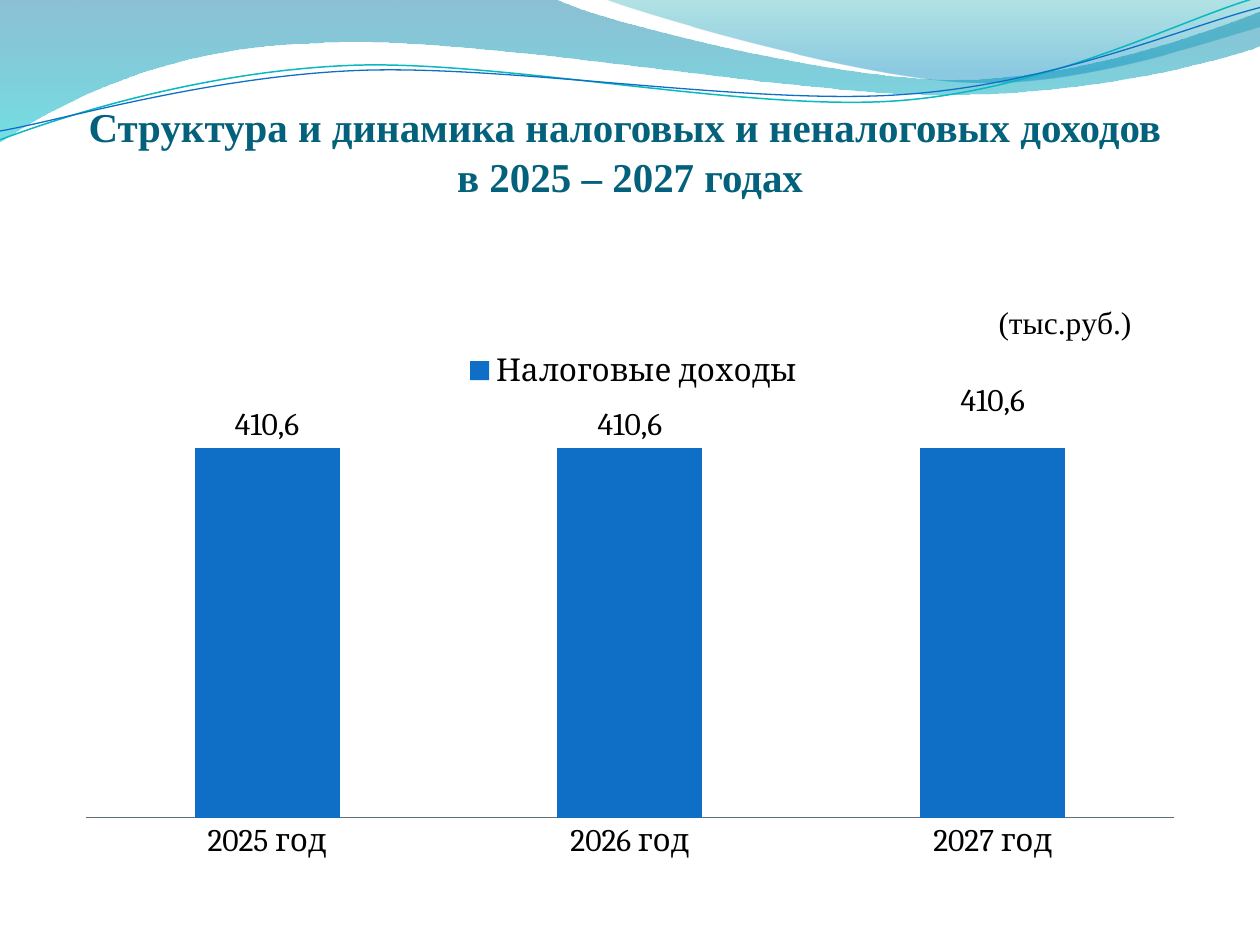
import lxml.etree
import pptx
import pptx.chart.data
import pptx.dml.color
import pptx.enum.chart
import pptx.enum.text
import pptx.oxml
import pptx.oxml.ns
import pptx.util

RGBColor = pptx.dml.color.RGBColor
TITLE_TEAL = RGBColor(0x04, 0x61, 0x7B)
BLUE = RGBColor(0x0F, 0x6F, 0xC6)
AQUA = RGBColor(0x0A, 0xB8, 0xBF)
WAVE_TOP = RGBColor(0x00, 0x74, 0xA1)
WAVE_BOTTOM = RGBColor(0x00, 0xC6, 0xCF)
CREST_TOP = RGBColor(0x00, 0xA1, 0xA9)
CREST_BOTTOM = RGBColor(0x00, 0x8B, 0xBF)
BLACK = RGBColor(0, 0, 0)
AXIS_GRAY = RGBColor(0x60, 0x70, 0x78)

deck = pptx.Presentation()
deck.slide_width = pptx.util.Inches(10)
deck.slide_height = pptx.util.Inches(7.5)
WIDTH, HEIGHT = deck.slide_width, deck.slide_height
page = deck.slides.add_slide(deck.slide_layouts[5])


def add_outline(steps, closed):
    """Draw a path in inches: pairs are line ends, six numbers a cubic curve."""
    points = [(round(step[i] * 100), round(step[i + 1] * 100))
              for step in steps for i in range(0, len(step), 2)]
    builder = page.shapes.build_freeform(*points[0], scale=pptx.util.Inches(0.01))
    builder.add_line_segments(points[1:], close=closed)
    shape = builder.convert_to_shape()
    shape.shadow.inherit = False
    lines = iter(shape.element.xpath(".//a:lnTo"))
    for step in steps[1:]:
        first = next(lines)
        if len(step) == 6:
            first.tag = pptx.oxml.ns.qn("a:cubicBezTo")
            for line in (next(lines), next(lines)):
                first.append(line[0])
                line.getparent().remove(line)
    return shape


def set_layout(parent, index, **values):
    """Give a chart part a manual layout as its child number index."""
    for old in parent.findall(pptx.oxml.ns.qn("c:layout")):
        parent.remove(old)
    tags = "".join(f'<c:{key} val="{value}"/>' for key, value in values.items())
    parent.insert(index, pptx.oxml.parse_xml(
        f'<c:layout {pptx.oxml.ns.nsdecls("c")}><c:manualLayout>{tags}'
        '</c:manualLayout></c:layout>'))


# Waves: outline, then (colour, position, opacity in percent) of each stop
waves = [
    ([(0, 0), (4.4, -0.01), (4.76, 0.17, 6.64, 0.63, 7.58, 0.63),
      (8.53, 0.63, 9.58, 0.26, 10, 0.09), (10.01, 0.36),
      (9.83, 0.44, 8.7, 0.76, 7.46, 0.75), (6.22, 0.75, 3.82, 0.28, 2.57, 0.34),
      (1.29, 0.36, 0.46, 0.83, -0.01, 1.13)],
     [(WAVE_TOP, 0, 45), (WAVE_BOTTOM, 1, 55)]),
    ([(4.79, -0.01), (5.09, 0.11, 6.82, 0.62, 7.69, 0.65),
      (8.56, 0.69, 9.61, 0.32, 10, 0.21), (10, 0)],
     [(CREST_TOP, 0, 30), (CREST_BOTTOM, 0.8, 45)]),
]
for outline, stops in waves:
    wave = add_outline(outline, True)
    wave.line.fill.background()
    wave.fill.gradient()
    wave.fill.gradient_angle = 270
    for stop, (color, position, opacity) in zip(wave.fill.gradient_stops, stops):
        stop.color.rgb = color
        stop.position = position
    for node, (color, position, opacity) in zip(wave.element.xpath(".//a:gs/a:srgbClr"), stops):
        lxml.etree.SubElement(node, pptx.oxml.ns.qn("a:alpha"), val=str(opacity * 1000))

ripples = [
    ([(0, 1.11), (0.48, 0.93, 1.58, 0.57, 2.77, 0.52),
      (3.95, 0.47, 5.93, 0.89, 7.13, 0.8), (8.33, 0.71, 9.38, 0.15, 9.98, -0.02)], AQUA, 0.85),
    ([(0, 1.04), (0.47, 0.96, 1.64, 0.61, 2.83, 0.56),
      (4.03, 0.51, 5.97, 0.84, 7.17, 0.75), (8.36, 0.67, 9.41, 0.21, 10, 0.06)], BLUE, 0.75),
]
for outline, color, thickness in ripples:
    ripple = add_outline(outline, False)
    ripple.fill.background()
    ripple.line.color.rgb = color
    ripple.line.width = pptx.util.Pt(thickness)

# Title
title = page.shapes.title
title.left, title.top = int(WIDTH * 0.05), int(HEIGHT * 0.1)
title.width, title.height = int(WIDTH * 0.9), int(HEIGHT * 0.17)
frame = title.text_frame
frame.word_wrap = True
frame.auto_size = pptx.enum.text.MSO_AUTO_SIZE.NONE
frame.vertical_anchor = pptx.enum.text.MSO_ANCHOR.TOP
frame.margin_left = frame.margin_right = frame.margin_bottom = 0
frame.margin_top = pptx.util.Inches(0.05)
frame.text = "Структура и динамика налоговых и неналоговых доходов \vв 2025 – 2027 годах"
para = frame.paragraphs[0]
para.alignment = pptx.enum.text.PP_ALIGN.CENTER
para.line_spacing = 1.02
para.font.name = "Times New Roman"
para.font.size = pptx.util.Pt(23.4)
para.font.bold = True
para.font.color.rgb = TITLE_TEAL

# Column chart
data = pptx.chart.data.CategoryChartData(number_format="#,##0.0")
data.categories = ["2025 год", "2026 год", "2027 год"]
data.add_series("Налоговые доходы", [410.6, 410.6, 410.6])
chart = page.shapes.add_chart(
    pptx.enum.chart.XL_CHART_TYPE.COLUMN_CLUSTERED, int(WIDTH * 0.05), int(HEIGHT * 0.283),
    int(WIDTH * 0.9), int(HEIGHT * 0.64), data).chart
chart.font.name = "Cambria"
chart.font.size = pptx.util.Pt(18)
chart.font.color.rgb = BLACK

chart.has_title = True
chart.chart_title.text_frame.text = "(тыс.руб.)"
unit = chart.chart_title.text_frame.paragraphs[0]
unit.font.name = "Times New Roman"
unit.font.size = pptx.util.Pt(18)
unit.font.bold = False
unit.font.color.rgb = BLACK

chart.has_legend = True
chart.legend.position = pptx.enum.chart.XL_LEGEND_POSITION.TOP
chart.legend.include_in_layout = False

space = chart.element
set_layout(space.xpath("c:chart/c:title")[0], 1, xMode="edge", yMode="edge", x=0.82, y=0.05)
set_layout(space.xpath("c:chart/c:legend")[0], 1, xMode="edge", yMode="edge", x=0.35, y=0.13)
set_layout(space.xpath("c:chart/c:plotArea")[0], 0, layoutTarget="inner",
           xMode="edge", yMode="edge", x=0.02, y=0.24, w=0.96, h=0.67)

chart.value_axis.visible = False
chart.value_axis.has_major_gridlines = False
chart.value_axis.minimum_scale = 0
chart.value_axis.maximum_scale = 450
chart.category_axis.major_tick_mark = pptx.enum.chart.XL_TICK_MARK.NONE
chart.category_axis.format.line.color.rgb = AXIS_GRAY
chart.category_axis.format.line.width = pptx.util.Pt(0.75)

plot = chart.plots[0]
plot.vary_by_categories = False
plot.gap_width = 150
plot.overlap = -25
series = plot.series[0]
series.format.fill.solid()
series.format.fill.fore_color.rgb = BLUE
series.data_labels.show_value = True
for point in range(3):
    label = series.points[point].data_label
    label.text_frame.text = "410,6"
    label.text_frame.paragraphs[0].font.size = pptx.util.Pt(18)
    label.position = pptx.enum.chart.XL_LABEL_POSITION.OUTSIDE_END
for leader in space.xpath(".//c:showLeaderLines"):
    leader.set("val", "0")
# The last label stands one line higher
set_layout(space.xpath(".//c:dLbl")[-1], 1, x=0, y=-0.04)

deck.save("out.pptx")
